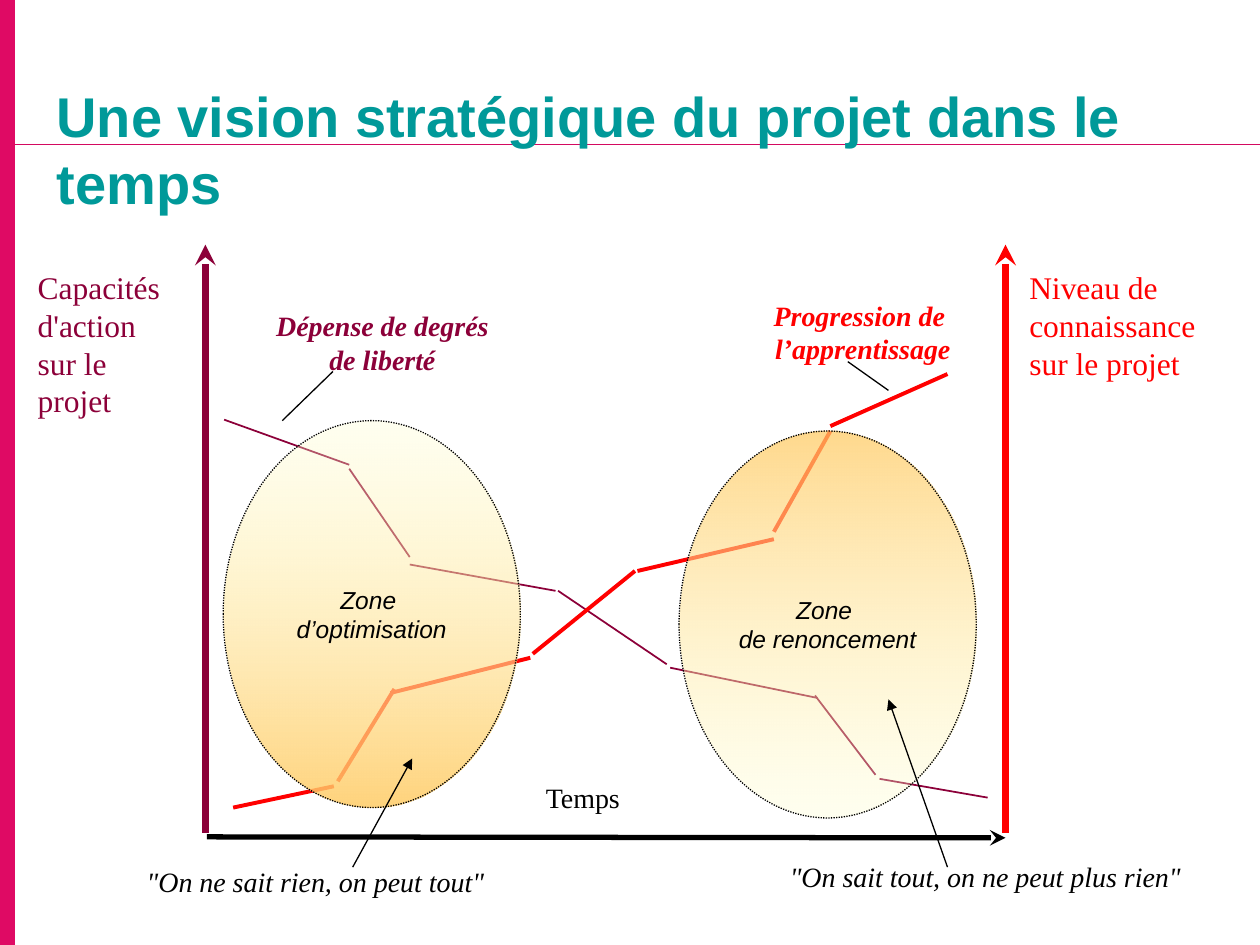
"""Build a slide on the strategic view of a project over time."""
import pptx
import pptx.dml.color
import pptx.enum.dml
import pptx.enum.shapes
import pptx.enum.text
import pptx.oxml.ns
import pptx.oxml.xmlchemy
import pptx.util
from pptx.util import Cm, Pt

RGBColor = pptx.dml.color.RGBColor
PINK = RGBColor(0xDF, 0x0A, 0x64)
ROSE = RGBColor(0xD3, 0x09, 0x60)
TEAL = RGBColor(0x00, 0x99, 0x99)
PLUM = RGBColor(0x8C, 0x00, 0x39)
RED = RGBColor(0xFF, 0x00, 0x00)
BLACK = RGBColor(0x00, 0x00, 0x00)
CREAM = RGBColor(0xFF, 0xFF, 0xCC)
AMBER = RGBColor(0xFF, 0xCC, 0x66)

ALIGN = pptx.enum.text.PP_ALIGN
SHAPE = pptx.enum.shapes.MSO_SHAPE
SERIF = "Times New Roman"

TITLE = {"name": "Arial", "size": Pt(32), "bold": True}
AXIS = {"name": SERIF, "size": Pt(18)}
TIME = {"name": SERIF, "size": Pt(16)}
QUOTE = {**TIME, "italic": True}
CURVE = {**QUOTE, "bold": True}
ZONE = {"name": "Arial", "size": Pt(14), "italic": True}

FREEDOM = [
    (4.52, 8.46, 7.04, 9.37), (7.04, 9.45, 8.26, 11.23),
    (8.26, 11.38, 11.2, 11.91), (11.25, 11.91, 13.44, 13.39),
    (13.51, 13.46, 16.48, 14.07), (16.43, 14.02, 17.65, 15.62),
    (17.73, 15.7, 19.91, 16.08),
]
LEARNING = [
    (19.1, 7.54, 16.74, 8.59), (16.74, 8.69, 15.6, 10.72),
    (15.6, 10.87, 12.85, 11.51), (12.8, 11.51, 10.74, 13.18),
    (10.69, 13.26, 7.87, 13.97), (7.95, 13.89, 6.81, 15.75),
    (6.73, 15.85, 4.7, 16.28),
]


def add_xml(parent, tag, **attrs):
    """Append an empty element with the given attributes."""
    el = pptx.oxml.xmlchemy.OxmlElement(tag)
    for key, value in attrs.items():
        el.set(key, value)
    parent.append(el)


def write(tf, lines, fmt, color, align):
    """Fill a text frame with one paragraph per line."""
    for i, line in enumerate(lines):
        p = tf.paragraphs[0] if i == 0 else tf.add_paragraph()
        p.alignment = align
        r = p.add_run()
        r.text = line
        for key, value in fmt.items():
            setattr(r.font, key, value)
        r.font.color.rgb = color


def add_text(s, box, lines, fmt, color=BLACK, align=ALIGN.CENTER, wrap=False):
    """Add a text box."""
    tf = s.shapes.add_textbox(*map(Cm, box)).text_frame
    tf.word_wrap = wrap
    write(tf, lines, fmt, color, align)


def add_line(s, ends, color=BLACK, width=0.75, arrow=None):
    """Add a straight line, with an optional arrowhead at its end."""
    sp = s.shapes.add_connector(
        pptx.enum.shapes.MSO_CONNECTOR.STRAIGHT, *map(Cm, ends))
    sp.line.color.rgb = color
    sp.line.width = Pt(width)
    if arrow:
        add_xml(sp.line._get_or_add_ln(), "a:tailEnd", type=arrow)
    add_xml(sp._element.spPr, "a:effectLst")


def add_band(s):
    """Add the coloured band on the left edge."""
    sp = s.shapes.add_shape(SHAPE.RECTANGLE, 0, 0, Cm(0.3), Cm(19.05))
    sp.shadow.inherit = False
    sp.fill.solid()
    sp.fill.fore_color.rgb = PINK
    sp.line.color.rgb = PINK
    sp.line.width = Pt(0.75)


def add_zone(s, left, top, lines, stops):
    """Add an ellipse with a vertical translucent gradient."""
    sp = s.shapes.add_shape(
        SHAPE.OVAL, Cm(left), Cm(top), Cm(5.99), Cm(7.8))
    sp.shadow.inherit = False
    sp.fill.gradient()
    sp.fill.gradient_angle = 270
    for stop, (color, _) in zip(sp.fill.gradient_stops, stops):
        stop.color.rgb = color
    tags = sp._element.spPr.iter(pptx.oxml.ns.qn("a:gs"))
    for gs, (_, opacity) in zip(tags, stops):
        add_xml(gs[0], "a:alpha", val=str(opacity * 1000))
    sp.line.color.rgb = BLACK
    sp.line.width = Pt(0.75)
    sp.line.dash_style = pptx.enum.dml.MSO_LINE.ROUND_DOT
    tf = sp.text_frame
    tf.word_wrap = False
    tf.vertical_anchor = pptx.enum.text.MSO_ANCHOR.MIDDLE
    write(tf, lines, ZONE, BLACK, ALIGN.CENTER)


def main():
    """Build and save the slide."""
    prs = pptx.Presentation()
    prs.slide_width, prs.slide_height = Cm(25.4), Cm(19.05)
    s = prs.slides.add_slide(prs.slide_layouts[6])

    add_band(s)
    add_line(s, (0.3, 2.92, 25.4, 2.92), ROSE)
    add_text(s, (0.89, 1.52, 24.51, 2.97),
             ["Une vision stratégique du projet dans le temps"],
             TITLE, TEAL, ALIGN.LEFT, True)

    add_text(s, (10.72, 15.62, 2.06, 0.94), ["Temps"], TIME)
    add_text(s, (2.69, 17.3, 7.34, 0.94),
             ['"On ne sait rien, on peut tout"'], QUOTE)
    add_text(s, (15.65, 17.2, 8.43, 0.94),
             ['"On sait tout, on ne peut plus rien"'], QUOTE)
    add_text(s, (5.31, 6.1, 4.8, 1.63),
             ["Dépense de degrés", "de liberté"], CURVE, PLUM)
    add_text(s, (15.34, 5.89, 4.11, 1.63),
             ["Progression de ", "l’apprentissage"], CURVE, RED)
    add_text(s, (0.51, 5.28, 3.51, 3.3),
             ["Capacités d'action", "sur le projet"],
             AXIS, PLUM, ALIGN.LEFT, True)
    add_text(s, (20.5, 5.28, 3.86, 2.54),
             ["Niveau de", "connaissance", "sur le projet"],
             AXIS, RED, ALIGN.LEFT)

    add_line(s, (4.14, 16.79, 4.14, 4.93), PLUM, 4, "stealth")
    add_line(s, (4.17, 16.87, 20.27, 16.89), BLACK, 3, "stealth")
    add_line(s, (20.27, 16.79, 20.27, 4.93), RED, 4, "stealth")
    for segments, color, width in ((FREEDOM, PLUM, 1), (LEARNING, RED, 2.25)):
        for ends in segments:
            add_line(s, ends, color, width)

    add_zone(s, 4.5, 8.48, ["Zone ", "d’optimisation"],
             [(CREAM, 29), (AMBER, 85)])
    add_zone(s, 13.69, 8.69, ["Zone ", "de renoncement"],
             [(AMBER, 74), (CREAM, 29)])

    add_line(s, (5.69, 8.48, 6.71, 7.49))
    add_line(s, (17.09, 7.29, 17.91, 7.87))
    add_line(s, (7.11, 17.48, 8.31, 15.29), arrow="triangle")
    add_line(s, (19.1, 17.48, 17.91, 14.1), arrow="triangle")
    prs.save("out.pptx")


if __name__ == "__main__":
    main()
